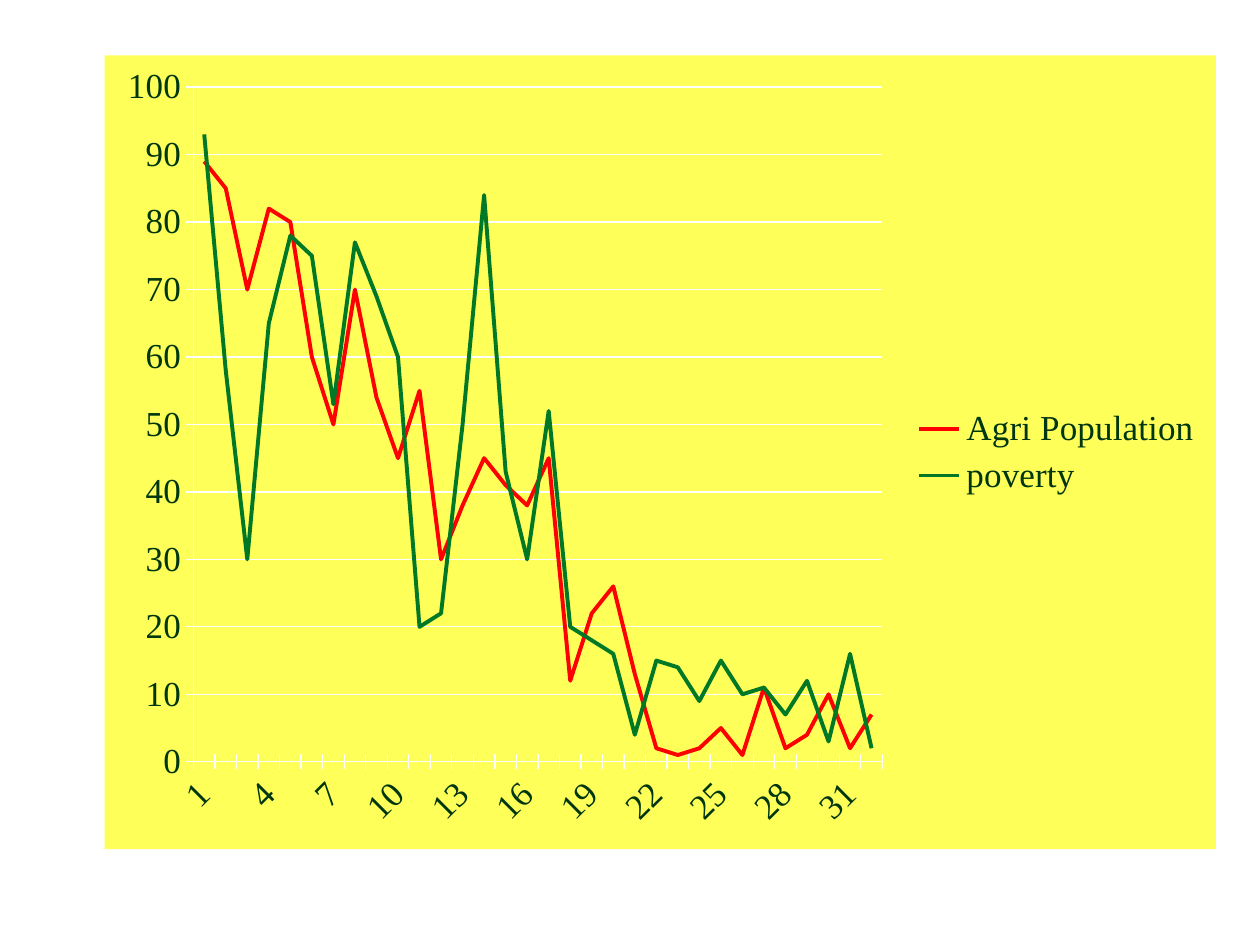
import pptx
import pptx.chart.data
import pptx.dml.color
import pptx.enum.chart
import pptx.oxml
import pptx.oxml.ns
import pptx.util

YELLOW = pptx.dml.color.RGBColor(0xFF, 0xFF, 0x59)
WHITE = pptx.dml.color.RGBColor(0xFF, 0xFF, 0xFF)
DARK_GREEN = pptx.dml.color.RGBColor(0x00, 0x36, 0x10)
RED = pptx.dml.color.RGBColor(0xFF, 0x00, 0x00)
GREEN = pptx.dml.color.RGBColor(0x00, 0x78, 0x25)

SERIES = [
    ("Agri Population", RED,
     [89, 85, 70, 82, 80, 60, 50, 70, 54, 45, 55, 30, 38, 45, 41, 38,
      45, 12, 22, 26, 13, 2, 1, 2, 5, 1, 11, 2, 4, 10, 2, 7]),
    ("poverty", GREEN,
     [93, 58, 30, 65, 78, 75, 53, 77, 69, 60, 20, 22, 50, 84, 43, 30,
      52, 20, 18, 16, 4, 15, 14, 9, 15, 10, 11, 7, 12, 3, 16, 2]),
]
PLOT_LAYOUT = {"x": 0.08, "y": 0.04, "w": 0.62, "h": 0.85}
LABEL_STEP = 3


def chart_element(markup):
    names = pptx.oxml.ns.nsdecls("c", "a")
    tag, rest = markup.split(">", 1)
    return pptx.oxml.parse_xml(f"{tag} {names}>{rest}")


def add_chart(page):
    data = pptx.chart.data.CategoryChartData()
    data.categories = [str(number + 1) for number in range(len(SERIES[0][2]))]
    for name, color, values in SERIES:
        data.add_series(name, values)
    frame = page.shapes.add_chart(
        pptx.enum.chart.XL_CHART_TYPE.LINE,
        *[pptx.util.Inches(length) for length in (0.83, 0.44, 8.82, 6.3)], data)
    return frame.chart


def style_chart(chart):
    chart.has_title = False
    chart.font.name = "Times New Roman"
    chart.font.size = pptx.util.Pt(20)
    chart.font.color.rgb = DARK_GREEN
    chart.has_legend = True
    chart.legend.position = pptx.enum.chart.XL_LEGEND_POSITION.RIGHT
    chart.legend.include_in_layout = False
    chart.plots[0].vary_by_categories = False
    for series, (name, color, values) in zip(chart.plots[0].series, SERIES):
        series.smooth = False
        series.marker.style = pptx.enum.chart.XL_MARKER_STYLE.NONE
        series.format.line.color.rgb = color
        series.format.line.width = pptx.util.Pt(2.25)


def style_axes(chart):
    for axis in (chart.category_axis, chart.value_axis):
        axis.major_tick_mark = pptx.enum.chart.XL_TICK_MARK.CROSS
        axis.format.line.color.rgb = WHITE
        axis.format.line.width = pptx.util.Pt(0.75)
    scale = chart.value_axis
    scale.minimum_scale, scale.maximum_scale, scale.major_unit = 0, 100, 10
    scale.has_major_gridlines = True
    scale.major_gridlines.format.line.color.rgb = WHITE
    scale.major_gridlines.format.line.width = pptx.util.Pt(0.75)

    categories = chart.category_axis
    font = categories.tick_labels.font
    font.size = pptx.util.Pt(20)
    font.name = "Times New Roman"
    font.color.rgb = DARK_GREEN
    element = categories._element
    element.find(pptx.oxml.ns.qn("c:txPr")).find(
        pptx.oxml.ns.qn("a:bodyPr")).set("rot", "-2700000")
    skip = chart_element(f'<c:tickLblSkip val="{LABEL_STEP}"></c:tickLblSkip>')
    element.find(pptx.oxml.ns.qn("c:noMultiLvlLbl")).addprevious(skip)


def fill_and_place(chart):
    space = chart._chartSpace
    background = chart_element(
        f'<c:spPr><a:solidFill><a:srgbClr val="{YELLOW}"/></a:solidFill>'
        '<a:ln><a:noFill/></a:ln></c:spPr>')
    space.find(pptx.oxml.ns.qn("c:txPr")).addprevious(background)
    area = space.chart.plotArea
    for old in area.findall(pptx.oxml.ns.qn("c:layout")):
        area.remove(old)
    modes = '<c:xMode val="edge"/><c:yMode val="edge"/>'
    sizes = "".join(f'<c:{key} val="{value}"/>' for key, value in PLOT_LAYOUT.items())
    area.insert(0, chart_element(
        '<c:layout><c:manualLayout><c:layoutTarget val="inner"/>'
        f"{modes}{sizes}</c:manualLayout></c:layout>"))


def main():
    deck = pptx.Presentation()
    deck.slide_width = pptx.util.Inches(10)
    deck.slide_height = pptx.util.Inches(7.5)
    page = deck.slides.add_slide(deck.slide_layouts[6])
    chart = add_chart(page)
    style_chart(chart)
    style_axes(chart)
    fill_and_place(chart)
    deck.save("out.pptx")


if __name__ == "__main__":
    main()
